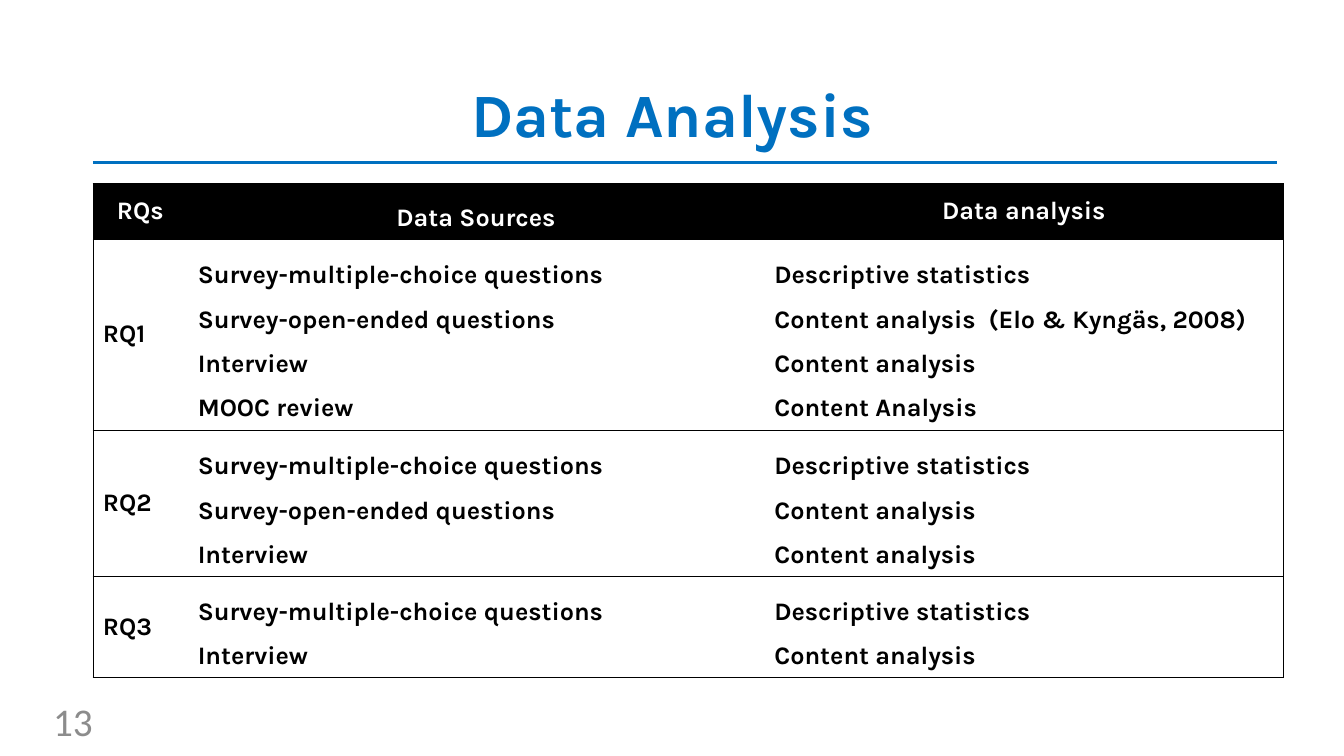
"""Build the Data Analysis slide: a title, a rule and a table of research questions."""
from dataclasses import dataclass

from lxml import etree
from pptx import Presentation, util as u
from pptx.dml.color import RGBColor
from pptx.enum import shapes, text
from pptx.oxml.ns import qn

BLUE, BLACK, WHITE, GREY = "0070C0", "000000", "FFFFFF", "8C8C8C"
LEFT = u.Cm(2.34)
COLUMN_WIDTHS = (2.39, 14.53, 13.08)
LINE_HEIGHT, CELL_PADDING = 1.12, 0.25
CENTER, ALIGN_LEFT, RIGHT = text.PP_ALIGN.CENTER, text.PP_ALIGN.LEFT, text.PP_ALIGN.RIGHT


@dataclass(frozen=True)
class Style:
    size: float
    color: str
    font: str = "Karla"
    bold: bool = True
    align: text.PP_ALIGN = ALIGN_LEFT
    spacing: float = 1.0


@dataclass(frozen=True)
class Question:
    name: str
    sources: tuple[str, ...]
    analyses: tuple[str, ...]


SURVEY_CHOICE = "Survey-multiple-choice questions"
SURVEY_OPEN = "Survey-open-ended questions"
STATISTICS = "Descriptive statistics"
CONTENT = "Content analysis"

QUESTIONS = (
    Question("RQ1", (SURVEY_CHOICE, SURVEY_OPEN, "Interview", "MOOC review"),
             (STATISTICS, "Content analysis  (Elo & Kyngäs, 2008)", CONTENT, "Content Analysis")),
    Question("RQ2", (SURVEY_CHOICE, SURVEY_OPEN, "Interview"), (STATISTICS, CONTENT, CONTENT)),
    Question("RQ3", (SURVEY_CHOICE, "Interview"), (STATISTICS, CONTENT)),
)


def rgb(value: str) -> RGBColor:
    return RGBColor.from_string(value)


def write(tf, content: str, style: Style) -> None:
    tf.text = content
    for p in tf.paragraphs:
        p.alignment = style.align
        p.line_spacing = style.spacing
        for r in p.runs:
            r.font.name = style.font
            r.font.size = u.Pt(style.size)
            r.font.bold = style.bold
            r.font.color.rgb = rgb(style.color)


def add_border(cell, side: str, width: float) -> None:
    ln = etree.SubElement(cell._tc.get_or_add_tcPr(), qn(f"a:ln{side}"), w=str(u.Pt(width)))
    if width:
        fill = etree.SubElement(ln, qn("a:solidFill"))
        etree.SubElement(fill, qn("a:srgbClr"), val=BLACK)
    else:
        etree.SubElement(ln, qn("a:noFill"))


def format_cell(cell, column: int, content: str, style: Style, fill: str) -> None:
    write(cell.text_frame, content, style)
    cell.vertical_anchor = text.MSO_ANCHOR.MIDDLE
    last = len(COLUMN_WIDTHS) - 1
    widths = {"L": 0 if column else 0.5, "R": 1 if column == last else 0, "T": 0.5, "B": 0.5}
    for side, width in widths.items():
        add_border(cell, side, width)
    cell.fill.solid()
    cell.fill.fore_color.rgb = rgb(fill)


def add_title(slide) -> None:
    sp = slide.shapes.title
    sp.left, sp.top, sp.width, sp.height = LEFT, u.Cm(1.12), u.Cm(29.21), u.Cm(3.68)
    tf = sp.text_frame
    tf.auto_size = text.MSO_AUTO_SIZE.NONE
    tf.vertical_anchor = text.MSO_ANCHOR.MIDDLE
    write(tf, "Data Analysis", Style(44, BLUE, align=CENTER, spacing=0.9))


def add_rule(slide) -> None:
    y = u.Cm(4.09)
    line = slide.shapes.add_connector(shapes.MSO_CONNECTOR.STRAIGHT, LEFT, y, u.Cm(32.18), y)
    line.line.color.rgb = rgb(BLUE)
    line.line.width = u.Pt(2)
    etree.SubElement(line._element.spPr, qn("a:effectLst"))


def add_page_number(slide) -> None:
    sp = slide.shapes.add_textbox(0, u.Cm(17.65), u.Cm(2.59), u.Cm(1.02))
    tf = sp.text_frame
    tf.word_wrap = True
    tf.vertical_anchor = text.MSO_ANCHOR.MIDDLE
    write(tf, "13", Style(28, GREY, font="Calibri", bold=False, align=RIGHT))


def add_questions_table(slide) -> None:
    line_counts = [1] + [len(q.sources) for q in QUESTIONS]
    heights = [u.Cm(n * LINE_HEIGHT + CELL_PADDING) for n in line_counts]
    widths = [u.Cm(w) for w in COLUMN_WIDTHS]
    frame = slide.shapes.add_table(len(heights), len(widths), LEFT, u.Cm(4.62),
                                   sum(widths), sum(heights))
    table = frame.table
    for column, width in zip(table.columns, widths):
        column.width = width
    for row, height in zip(table.rows, heights):
        row.height = height

    for i, heading in enumerate(("RQs", "Data Sources", "Data analysis")):
        spacing = 1.5 if heading == "Data Sources" else 1.0
        format_cell(table.cell(0, i), i, heading,
                    Style(18, WHITE, align=CENTER, spacing=spacing), BLACK)
    for n, q in enumerate(QUESTIONS, start=1):
        for i, lines in enumerate(((q.name,), q.sources, q.analyses)):
            format_cell(table.cell(n, i), i, "\n".join(lines),
                        Style(18, BLACK, spacing=1.5 if i else 1.0), WHITE)


def main() -> None:
    prs = Presentation()
    prs.slide_width, prs.slide_height = u.Cm(33.87), u.Cm(19.05)
    slide = prs.slides.add_slide(prs.slide_layouts[5])
    add_title(slide)
    add_rule(slide)
    add_page_number(slide)
    add_questions_table(slide)
    prs.save("out.pptx")


if __name__ == "__main__":
    main()
